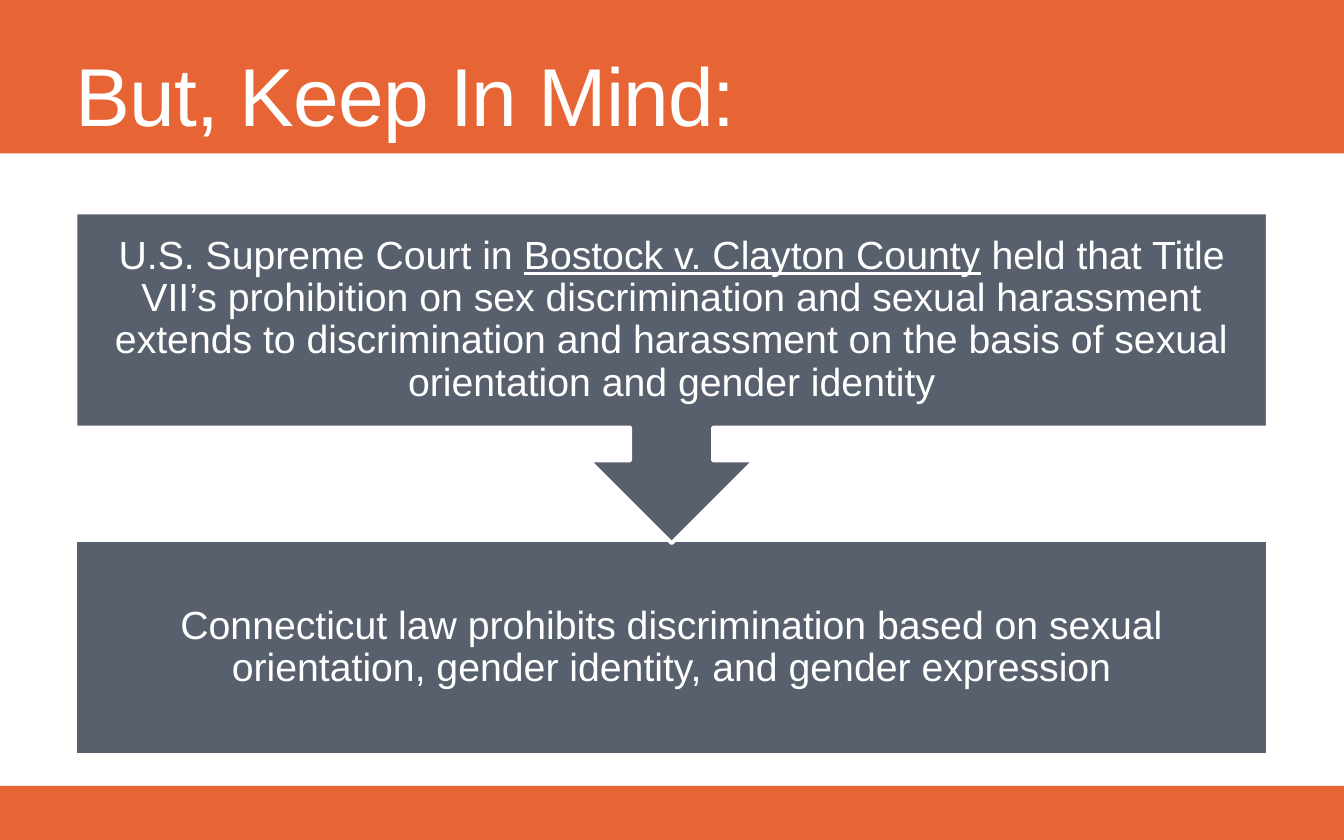
"""Build the "But, Keep In Mind" slide with two linked statements."""
from pptx import Presentation
from pptx.dml.color import RGBColor
from pptx.enum.shapes import MSO_SHAPE
from pptx.enum.text import MSO_ANCHOR, PP_ALIGN
from pptx.util import Cm, Pt


def rgb(value):
    return RGBColor.from_string(value)


def add_block(shape, left, top, width, height, fill):
    sp = slide.shapes.add_shape(shape, Cm(left), Cm(top), Cm(width), Cm(height))
    sp.shadow.inherit = False
    sp.fill.solid()
    sp.fill.fore_color.rgb = rgb(fill)
    sp.line.fill.background()
    return sp


ORANGE, SLATE, WHITE = "E76434", "57606C", "FFFFFF"
LEFT, WIDTH = 1.43, 22.53

prs = Presentation()
prs.slide_width, prs.slide_height = Cm(25.4), Cm(15.88)
slide = prs.slides.add_slide(prs.slide_layouts[5])

for top, height in [(0, 2.9), (14.86, 1.02)]:
    band = add_block(MSO_SHAPE.RECTANGLE, 0, top, 25.4, height, ORANGE)
    slide.shapes._spTree.insert(2, band._element)

title = slide.shapes.title
title.left, title.top, title.width, title.height = Cm(LEFT), Cm(1.07), Cm(WIDTH), Cm(1.7)
tf = title.text_frame
tf.text = "But, Keep In Mind:"
tf.margin_left = tf.margin_top = tf.margin_right = tf.margin_bottom = 0
tf.vertical_anchor = MSO_ANCHOR.MIDDLE
p = tf.paragraphs[0]
p.alignment = PP_ALIGN.LEFT
p.line_spacing = 0.85
p.font.size, p.font.name = Pt(44), "Arial"
p.font.color.rgb = rgb(WHITE)
p.runs[0].font._element.set("spc", "-50")

statements = [
    (MSO_SHAPE.RECTANGLE, 10.22, 4.06, [
        ("Connecticut law prohibits discrimination based on sexual orientation, "
         "gender identity, and gender expression", False)]),
    (MSO_SHAPE.DOWN_ARROW_CALLOUT, 4.02, 6.25, [
        ("U.S. Supreme Court in ", False),
        ("Bostock v. Clayton County", True),
        (" held that Title VII’s prohibition on sex discrimination and sexual "
         "harassment extends to discrimination and harassment on the basis of "
         "sexual orientation and gender identity", False)]),
]
for shape, top, height, runs in statements:
    sp = add_block(shape, LEFT, top, WIDTH, height, SLATE)
    sp.line.color.rgb = rgb(WHITE)
    sp.line.width = Pt(2)
    tf = sp.text_frame
    tf.word_wrap = True
    tf.margin_left = tf.margin_top = tf.margin_right = tf.margin_bottom = Cm(0.41)
    tf.vertical_anchor = MSO_ANCHOR.MIDDLE
    p = tf.paragraphs[0]
    p.alignment = PP_ALIGN.CENTER
    p.line_spacing = 0.9
    p.font.size, p.font.name = Pt(21), "Arial"
    p.font.color.rgb = rgb(WHITE)
    for text, underlined in runs:
        r = p.add_run()
        r.text = text
        if underlined:
            r.font.underline = True

prs.save("out.pptx")
